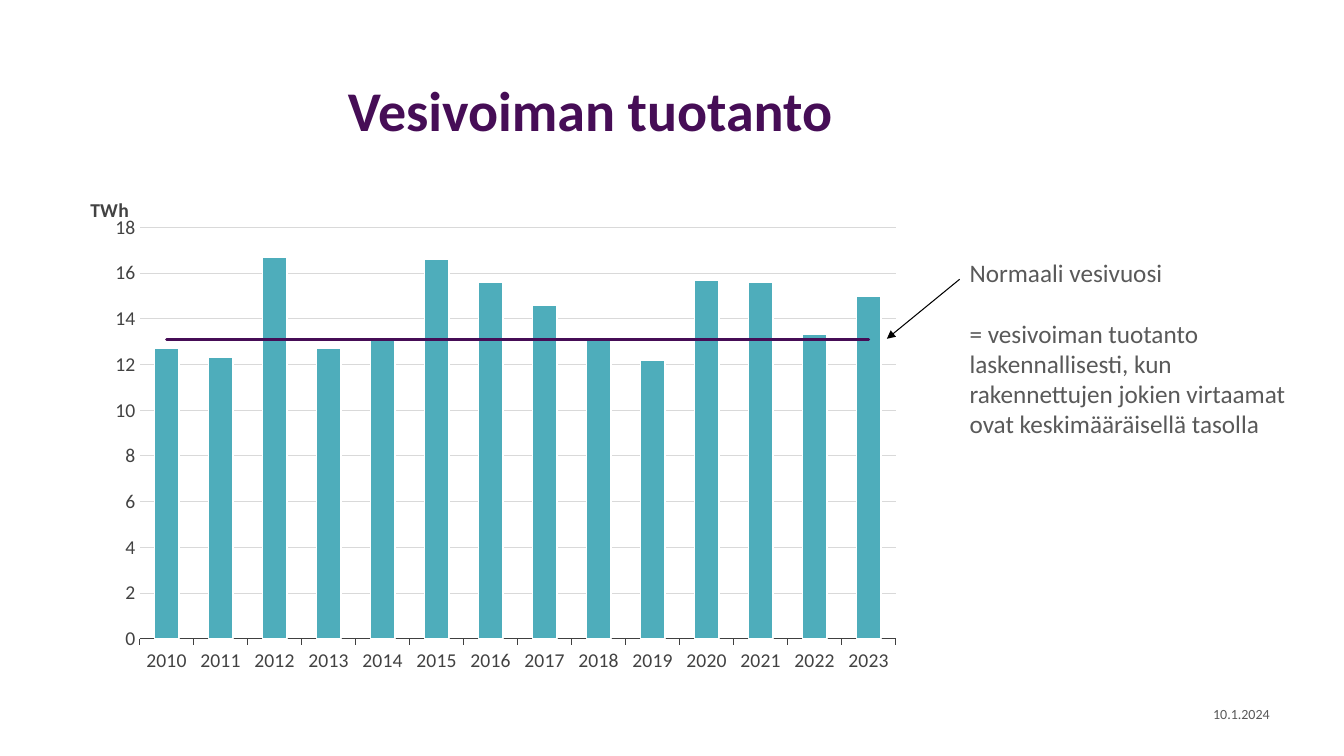
import pptx
import pptx.chart.data
import pptx.dml.color
import pptx.enum.chart
import pptx.enum.shapes
import pptx.enum.text
import pptx.oxml
import pptx.oxml.ns
import pptx.util

# Content
TITLE = "Vesivoiman tuotanto"
DATE = "10.1.2024"
NOTE = [
    "Normaali vesivuosi",
    "= vesivoiman tuotanto laskennallisesti, kun rakennettujen jokien "
    "virtaamat ovat keskimääräisellä tasolla",
]
UNIT = "TWh"
FIRST_YEAR = 2010
PRODUCTION = [12.7, 12.3, 16.7, 12.7, 13.2, 16.6, 15.6,
              14.6, 13.1, 12.2, 15.7, 15.6, 13.3, 15]
NORMAL_YEAR = 13.1

# Look and places, in points
FONT = "Calibri"
COLORS = {"purple": "460D56", "teal": "4EADBB", "text": "595959", "label": "424242",
          "axis": "404040", "grid": "D9D9D9", "white": "FFFFFF", "black": "000000"}
TITLE_BOX = (48, 29, 747, 104)
DATE_BOX = (834, 500, 80, 20)
NOTE_BOX = (685.5, 180, 249, 138)
CHART_BOX = (62, 129, 589, 360)
ARROW = (685.5, 199.5, 633.5, 242)
PLOT_LAYOUT = {"x": 0.064, "y": 0.093, "w": 0.917, "h": 0.816}
UNIT_LAYOUT = {"x": 0.0, "y": 0.025}

Pt = pptx.util.Pt
qn = pptx.oxml.ns.qn
ALIGN = pptx.enum.text.PP_ALIGN
ANCHOR = pptx.enum.text.MSO_ANCHOR
TICK = pptx.enum.chart.XL_TICK_MARK


def rgb(name):
    return pptx.dml.color.RGBColor.from_string(COLORS[name])


def points(values):
    return [Pt(value) for value in values]


def apply(target, values):
    for name, value in values.items():
        setattr(target, name, value)


def style_font(font, size, color, bold=False):
    apply(font, {"name": FONT, "size": Pt(size), "bold": bold})
    font.color.rgb = rgb(color)


def style_line(line, color, width):
    line.color.rgb = rgb(color)
    line.width = Pt(width)


def xml(tag, inner=""):
    namespaces = pptx.oxml.ns.nsdecls("a", "c")
    return pptx.oxml.parse_xml(f"<{tag} {namespaces}>{inner}</{tag.split()[0]}>")


def manual_layout(fractions, inner=False):
    target = '<c:layoutTarget val="inner"/>' if inner else ""
    modes = '<c:xMode val="edge"/><c:yMode val="edge"/>'
    sizes = "".join(f'<c:{key} val="{value}"/>' for key, value in fractions.items())
    return xml("c:layout", f"<c:manualLayout>{target}{modes}{sizes}</c:manualLayout>")


def set_layout(parent, layout, position):
    for old in parent.findall(qn("c:layout")):
        parent.remove(old)
    parent.insert(position, layout)


def add_text(page, box, lines, size, color, anchor, align, bold=False, gap=0, spacing=None):
    frame = page.shapes.add_textbox(*points(box)).text_frame
    apply(frame, {"word_wrap": True, "vertical_anchor": anchor})
    for index, line in enumerate(lines):
        para = frame.add_paragraph() if index else frame.paragraphs[0]
        apply(para, {"text": line, "alignment": align, "line_spacing": spacing})
        if index:
            para.space_before = Pt(gap)
        style_font(para.runs[0].font, size, color, bold)


def add_production_chart(page):
    data = pptx.chart.data.CategoryChartData()
    data.categories = [str(FIRST_YEAR + index) for index in range(len(PRODUCTION))]
    data.add_series("Tuotanto", PRODUCTION)
    data.add_series("Normaali vesivuosi", [NORMAL_YEAR] * len(PRODUCTION))
    kind = pptx.enum.chart.XL_CHART_TYPE.COLUMN_CLUSTERED
    chart = page.shapes.add_chart(kind, *points(CHART_BOX), data).chart
    apply(chart, {"has_legend": False, "has_title": False})
    style_font(chart.font, 14, "label")

    # Axes
    years, values = chart.category_axis, chart.value_axis
    apply(years, {"major_tick_mark": TICK.OUTSIDE, "minor_tick_mark": TICK.NONE})
    style_line(years.format.line, "axis", 0.75)
    apply(values, {"major_tick_mark": TICK.NONE, "minor_tick_mark": TICK.NONE,
                   "minimum_scale": 0, "maximum_scale": 18, "major_unit": 2})
    values.format.line.fill.background()
    style_line(values.major_gridlines.format.line, "grid", 0.5)
    for axis in (years, values):
        style_font(axis.tick_labels.font, 14, "label")

    # Horizontal unit label above the value axis
    para = values.axis_title.text_frame.paragraphs[0]
    para.text = UNIT
    style_font(para.runs[0].font, 14, "label", bold=True)
    unit = chart._chartSpace.xpath(".//c:valAx/c:title")[0]
    unit.xpath(".//a:bodyPr")[0].set("rot", "0")
    set_layout(unit, manual_layout(UNIT_LAYOUT), 1)

    # The normal year moves from the columns to a line plot on the same axes
    area = chart._chartSpace.xpath(".//c:plotArea")[0]
    columns = area.find(qn("c:barChart"))
    normal = columns.findall(qn("c:ser"))[1]
    for flag in normal.findall(qn("c:invertIfNegative")):
        normal.remove(flag)
    axis_ids = "".join(f'<c:axId val="{axis.get("val")}"/>'
                       for axis in columns.findall(qn("c:axId")))
    lines = xml("c:lineChart", '<c:grouping val="standard"/><c:varyColors val="0"/>'
                f'<c:marker val="1"/>{axis_ids}')
    lines.insert(2, normal)
    columns.addnext(lines)
    set_layout(area, manual_layout(PLOT_LAYOUT, inner=True), 0)

    # Series
    column_plot, line_plot = chart.plots
    apply(column_plot, {"gap_width": 120, "vary_by_categories": False})
    column = column_plot.series[0]
    column.format.fill.solid()
    column.format.fill.fore_color.rgb = rgb("teal")
    style_line(column.format.line, "white", 1)
    level = line_plot.series[0]
    level.smooth = False
    level.marker.style = pptx.enum.chart.XL_MARKER_STYLE.NONE
    style_line(level.format.line, "purple", 2)
    normal.xpath("./c:spPr/a:ln")[0].set("cap", "rnd")


def add_arrow(page):
    kind = pptx.enum.shapes.MSO_CONNECTOR.STRAIGHT
    arrow = page.shapes.add_connector(kind, *points(ARROW))
    style_line(arrow.line, "black", 0.75)
    arrow.line._get_or_add_ln().append(xml('a:tailEnd type="triangle"'))
    arrow._element.spPr.append(xml("a:effectLst"))


def main():
    deck = pptx.Presentation()
    apply(deck, {"slide_width": Pt(960), "slide_height": Pt(540)})
    page = deck.slides.add_slide(deck.slide_layouts[6])
    add_text(page, TITLE_BOX, [TITLE], 40, "purple", ANCHOR.MIDDLE, ALIGN.CENTER,
             bold=True, spacing=0.9)
    add_text(page, DATE_BOX, [DATE], 10, "text", ANCHOR.MIDDLE, ALIGN.RIGHT)
    add_text(page, NOTE_BOX, NOTE, 18, "text", ANCHOR.TOP, ALIGN.LEFT, gap=22)
    add_arrow(page)
    add_production_chart(page)
    deck.save("out.pptx")


if __name__ == "__main__":
    main()
